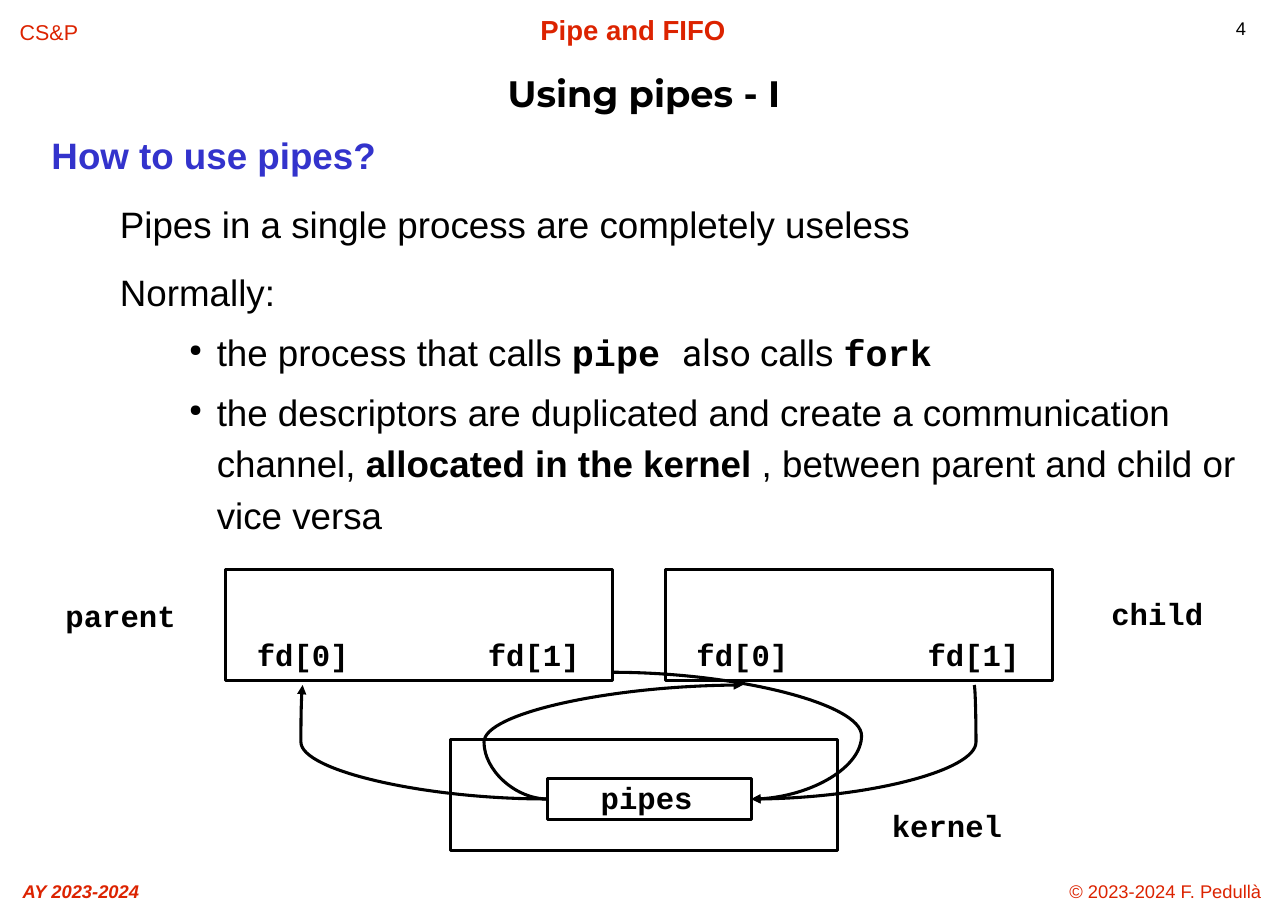
"""Build the slide on using pipes between a parent and a child process."""
import pptx
import pptx.util
import pptx.dml.color
import pptx.enum.shapes
import pptx.enum.text
import pptx.oxml.ns
import lxml.etree

Pt = pptx.util.Pt
ALIGN = pptx.enum.text.PP_ALIGN
RED, BLUE, BLACK = "DC2300", "3333CC", "000000"
SANS, MONO = "Arial", "Courier New"

HEADS = [
    ("4", (800.6, 7.2, 41, 25.2), 12, "", ALIGN.LEFT),
    ("© 2023-2024 F. Pedullà", (682.4, 571.7, 158.4, 23.8), 12, "", ALIGN.CENTER),
    ("AY 2023-2024", (0, 571.7, 105.8, 23.8), 12, "bi", ALIGN.CENTER),
    ("Pipe and FIFO", (298.8, 5, 229.7, 23.8), 18, "b", ALIGN.CENTER),
    ("CS&P", (1, 8.6, 62, 23.8), 14, "", ALIGN.CENTER),
]
TITLE = ("Using pipes - I", (19.4, 40.3, 802.8, 45.4))

LEVELS = {
    "head": (29.5, -29.5, Pt(26.2), 0),
    "text": (74.9, -30.2, 1.18, 11),
    "item": (108, -18, 1.18, 5),
}
BODY_BOX = (26.6, 85.7, 801.4, 265)
BODY = [
    ("head", [("How to use pipes?", SANS, "b", BLUE)]),
    ("text", [("Pipes in a single process are completely useless", SANS, "", BLACK)]),
    ("text", [("Normally:", SANS, "", BLACK)]),
    ("item", [("the process that calls ", SANS, "", BLACK),
              ("pipe ", MONO, "b", BLACK),
              ("also ", "Roboto", "", BLACK),
              ("calls ", SANS, "", BLACK),
              ("fork", MONO, "b", BLACK)]),
    ("item", [("the descriptors are duplicated and create a communication channel, ",
               SANS, "", BLACK),
              ("allocated in the kernel ", SANS, "b", BLACK),
              (", between parent and child or vice versa", SANS, "", BLACK)]),
]

WIDE, TALL = 252.7, 72.7
PROCS = [(147.6, 372.2), (434.9, 372.2)]
KERNEL = (294.5, 483.1, WIDE, TALL)
PIPE = (357.8, 509, 133.2, 26.6)
ENDS = [("fd[0]", 4.6), ("fd[1]", 155.6)]
END_DROP, END_WIDE, TAG_TALL = 36.8, 91.4, 39.6
TAGS = [
    ("parent", 25.2, 383.8, 107.3),
    ("child", 710.6, 382.3, 91.4),
    ("kernel", 565.2, 521.3, 107.3),
    ("pipes", 384.5, 502.6, 76.3),
]
MID = PIPE[1] + PIPE[3] / 2
LEFT, RIGHT = PIPE[0], PIPE[0] + PIPE[2]
CURVES = [
    ((636.7, 447.8), (RIGHT, MID), -800),
    ((LEFT, MID), (485.5, 447.8), -32500),
    ((399.8, 439.4), (RIGHT, MID), 179000),
    ((LEFT, MID), (197.8, 447.8), 100700),
]


def color(code):
    return pptx.dml.color.RGBColor.from_string(code)


def style(run, size, face, marks, code):
    font = run.font
    font.size, font.name = Pt(size), face
    font.bold, font.italic = "b" in marks, "i" in marks
    font.color.rgb = color(code)


def frame(slide, box):
    area = slide.shapes.add_textbox(*map(Pt, box)).text_frame
    area.word_wrap = True
    return area


def label(slide, text, box, size, face, marks, code, align=ALIGN.CENTER, space=1.01):
    area = frame(slide, box)
    area.text = text
    para = area.paragraphs[0]
    para.alignment, para.line_spacing = align, space
    style(para.runs[0], size, face, marks, code)
    return area


def child(node, tag, **attrs):
    return lxml.etree.SubElement(node, pptx.oxml.ns.qn(tag), attrs)


def body(slide):
    area = frame(slide, BODY_BOX)
    for i, (level, parts) in enumerate(BODY):
        para = area.add_paragraph() if i else area.paragraphs[0]
        left, hang, space, gap = LEVELS[level]
        props = para._p.get_or_add_pPr()
        props.set("marL", str(int(Pt(left))))
        props.set("indent", str(int(Pt(hang))))
        if level == "item":
            child(child(props, "a:buClr"), "a:srgbClr", val=BLACK)
            child(props, "a:buSzPct", val="45000")
            child(props, "a:buChar", char="●")
        para.line_spacing, para.space_before = space, Pt(gap)
        for text, face, marks, code in parts:
            run = para.add_run()
            run.text = text
            style(run, 24, face, marks, code)


def stroke(line):
    line.color.rgb, line.width = color(BLACK), Pt(2)


def rect(slide, box):
    kind = pptx.enum.shapes.MSO_SHAPE.RECTANGLE
    shape = slide.shapes.add_shape(kind, *map(Pt, box))
    shape.shadow.inherit = False
    shape.fill.background()
    stroke(shape.line)


def curve(slide, start, end, bend):
    kind = pptx.enum.shapes.MSO_CONNECTOR.CURVE
    link = slide.shapes.add_connector(kind, *map(Pt, start + end))
    stroke(link.line)
    child(link.line._get_or_add_ln(), "a:tailEnd", type="triangle")
    props = link._element.spPr
    child(props, "a:effectLst")
    guides = props.find(".//" + pptx.oxml.ns.qn("a:avLst"))
    child(guides, "a:gd", name="adj1", fmla=f"val {bend}")


def main():
    deck = pptx.Presentation()
    deck.slide_width, deck.slide_height = Pt(841.68), Pt(595.44)
    slide = deck.slides.add_slide(deck.slide_layouts[6])
    for text, box, size, marks, align in HEADS:
        code = BLACK if text == "4" else RED
        label(slide, text, box, size, SANS, marks, code, align)
    title = label(slide, *TITLE, 24, "Montserrat", "b", BLACK, space=0.85)
    title.vertical_anchor = pptx.enum.text.MSO_ANCHOR.MIDDLE
    body(slide)
    tags = list(TAGS)
    for x, y in PROCS:
        rect(slide, (x, y, WIDE, TALL))
        tags += [(name, x + dx, y + END_DROP, END_WIDE) for name, dx in ENDS]
    rect(slide, KERNEL)
    rect(slide, PIPE)
    for text, x, y, wide in tags:
        label(slide, text, (x, y, wide, TAG_TALL), 20, MONO, "b", BLACK, space=1.12)
    for start, end, bend in CURVES:
        curve(slide, start, end, bend)
    deck.save("out.pptx")


if __name__ == "__main__":
    main()
